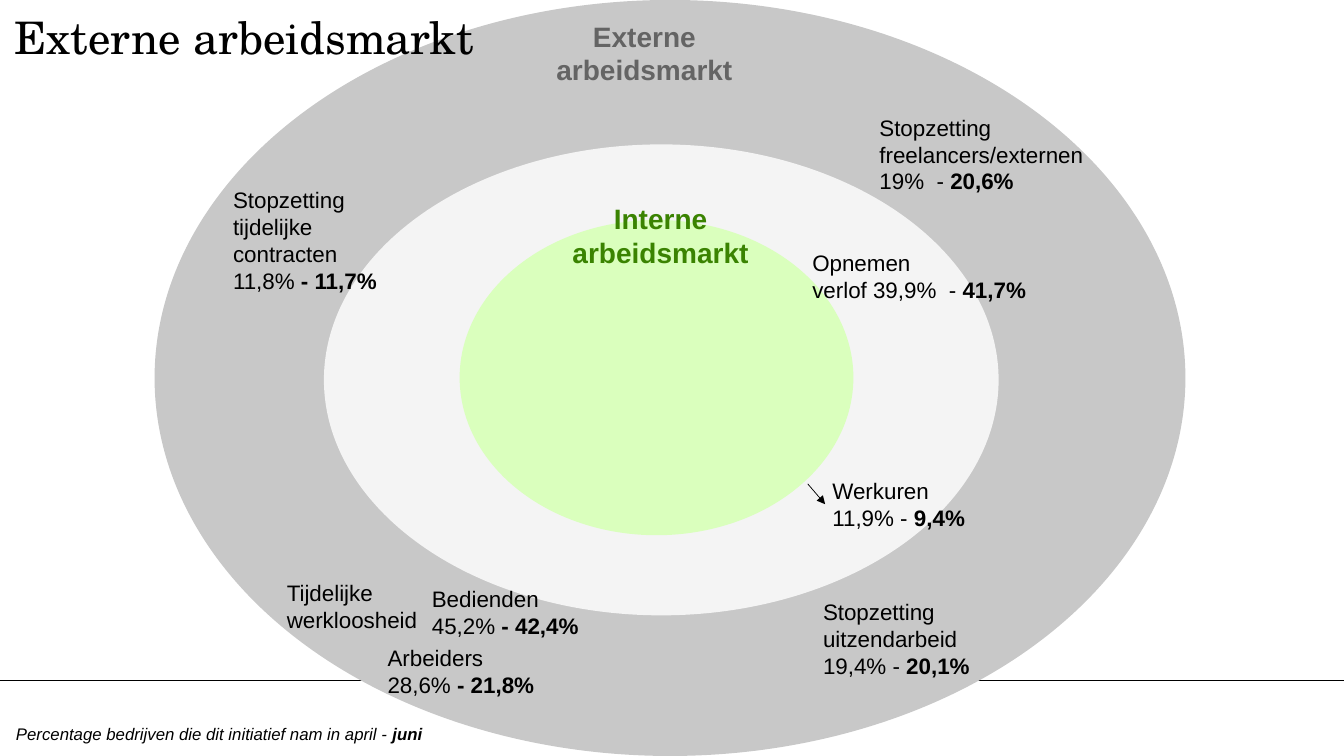
import pptx
import pptx.dml.color
import pptx.enum.shapes
import pptx.enum.text
import pptx.oxml
import pptx.oxml.ns
import pptx.util

SLIDE_WIDTH, SLIDE_HEIGHT = pptx.util.Inches(13.33), pptx.util.Inches(7.5)
THEME = {
    "text": "000000", "external": "646464", "internal": "3A8301",
    "rings": ("C8C8C8", "F4F4F4", "DAFFBD"),
    "title_font": "TeX Gyre Schola", "body_font": "Arial",
    "title_size": 32, "heading_size": 20, "label_size": 16, "note_size": 12,
    "line_width": 0.5,
}
LEFT, CENTER = pptx.enum.text.PP_ALIGN.LEFT, pptx.enum.text.PP_ALIGN.CENTER

# Boxes are left, top, width, height in percent of the slide.
RINGS = [(11.5, 0, 76.7, 100), (24.1, 19.1, 50.2, 62.3), (34.2, 29.1, 29.3, 41.7)]
HEADINGS = [
    ((40.6, 1.9, 14.7, 10.3), "external", ["Externe", "arbeidsmarkt"]),
    ((41.8, 26, 14.7, 10.3), "internal", ["Interne", "arbeidsmarkt"]),
]
# Each label: box, plain lines, bold ending of the last line.
LABELS = [
    ((20.6, 76, 11.3, 8.5), ["Tijdelijke", "werkloosheid"], ""),
    ((31.4, 76.7, 12.6, 8.5), ["Bedienden", "45,2% "], "- 42,4%"),
    ((28.1, 84.5, 12.6, 8.5), ["Arbeiders", "28,6% "], "- 21,8%"),
    ((16.6, 24, 12.3, 15.7),
     ["Stopzetting", "tijdelijke", "contracten", "11,8% "], "- 11,7%"),
    ((64.7, 14.4, 16.9, 12.1),
     ["Stopzetting", "freelancers/externen", "19%  - "], "20,6%"),
    ((60.5, 78.5, 12.6, 12.1),
     ["Stopzetting", "uitzendarbeid", "19,4% - "], "20,1%"),
    ((61.2, 62.5, 11.6, 12.1), ["Werkuren", "11,9% - "], "9,4%"),
    ((59.7, 32.3, 17.6, 8.5), ["Opnemen", "verlof 39,9%  - "], "41,7%"),
]
NOTE = ((0.45, 95.1, 32, 4),
        ["Percentage bedrijven die dit initiatief nam in april - "], "juni")


def place(box):
    """Turn percentages of the slide into alternating x and y lengths."""
    sides = (SLIDE_WIDTH, SLIDE_HEIGHT) * 2
    return [round(side * share / 100) for side, share in zip(sides, box)]


def rgb(color):
    return pptx.dml.color.RGBColor.from_string(color)


def add_run(paragraph, text, color="text", size="label_size", font="body_font", **styles):
    run = paragraph.add_run()
    run.text = text
    run.font.color.rgb = rgb(THEME[color])
    formats = {"size": pptx.util.Pt(THEME[size]), "name": THEME[font], **styles}
    for name, value in formats.items():
        setattr(run.font, name, value)


def add_label(slide, box, lines, bold_ending="", alignment=LEFT, **styles):
    frame = slide.shapes.add_textbox(*place(box)).text_frame
    frame.word_wrap = False
    for index, line in enumerate(lines):
        paragraph = frame.add_paragraph() if index else frame.paragraphs[0]
        paragraph.alignment = alignment
        add_run(paragraph, line, **styles)
    if bold_ending:
        add_run(paragraph, bold_ending, **{**styles, "bold": True})


def add_ring(slide, box, color):
    ring = slide.shapes.add_shape(pptx.enum.shapes.MSO_SHAPE.OVAL, *place(box))
    ring.shadow.inherit = False
    ring.fill.solid()
    ring.fill.fore_color.rgb = rgb(color)
    ring.line.fill.background()


def add_line(slide, ends, arrow=False):
    connector = slide.shapes.add_connector(
        pptx.enum.shapes.MSO_CONNECTOR.STRAIGHT, *place(ends))
    connector.line.color.rgb = rgb(THEME["text"])
    connector.line.width = pptx.util.Pt(THEME["line_width"])
    if arrow:
        head = pptx.oxml.parse_xml(
            f'<a:tailEnd {pptx.oxml.ns.nsdecls("a")} type="triangle"/>')
        connector.line.fill  # the line element exists once its colour is set
        connector.element.spPr.find(pptx.oxml.ns.qn("a:ln")).append(head)
    connector.element.spPr.append(
        pptx.oxml.parse_xml(f'<a:effectLst {pptx.oxml.ns.nsdecls("a")}/>'))


def set_title(slide, box, text):
    """Format the title and bring it in front of the rings."""
    title = slide.shapes.title
    for name, value in zip(("left", "top", "width", "height"), place(box)):
        setattr(title, name, value)
    frame = title.text_frame
    margin = pptx.util.Inches(0.04)
    formats = {"vertical_anchor": pptx.enum.text.MSO_ANCHOR.TOP, "word_wrap": True,
               "auto_size": pptx.enum.text.MSO_AUTO_SIZE.NONE,
               "margin_left": margin, "margin_top": margin,
               "margin_right": margin, "margin_bottom": margin}
    for name, value in formats.items():
        setattr(frame, name, value)
    frame.paragraphs[0].alignment = LEFT
    add_run(frame.paragraphs[0], text, size="title_size", font="title_font")
    title.element.getparent().append(title.element)


def main():
    presentation = pptx.Presentation()
    presentation.slide_width, presentation.slide_height = SLIDE_WIDTH, SLIDE_HEIGHT
    slide = presentation.slides.add_slide(presentation.slide_layouts[5])
    add_line(slide, (0, 90, 100, 90))
    for box, color in zip(RINGS, THEME["rings"]):
        add_ring(slide, box, color)
    for box, color, lines in HEADINGS:
        add_label(slide, box, lines, alignment=CENTER,
                  color=color, size="heading_size", bold=True)
    for label in LABELS:
        add_label(slide, *label)
    add_label(slide, *NOTE, size="note_size", italic=True)
    add_line(slide, (60.1, 64, 61.4, 66.7), arrow=True)
    set_title(slide, (0.75, 0.8, 89.8, 16.7), "Externe arbeidsmarkt")
    presentation.save("out.pptx")


if __name__ == "__main__":
    main()
